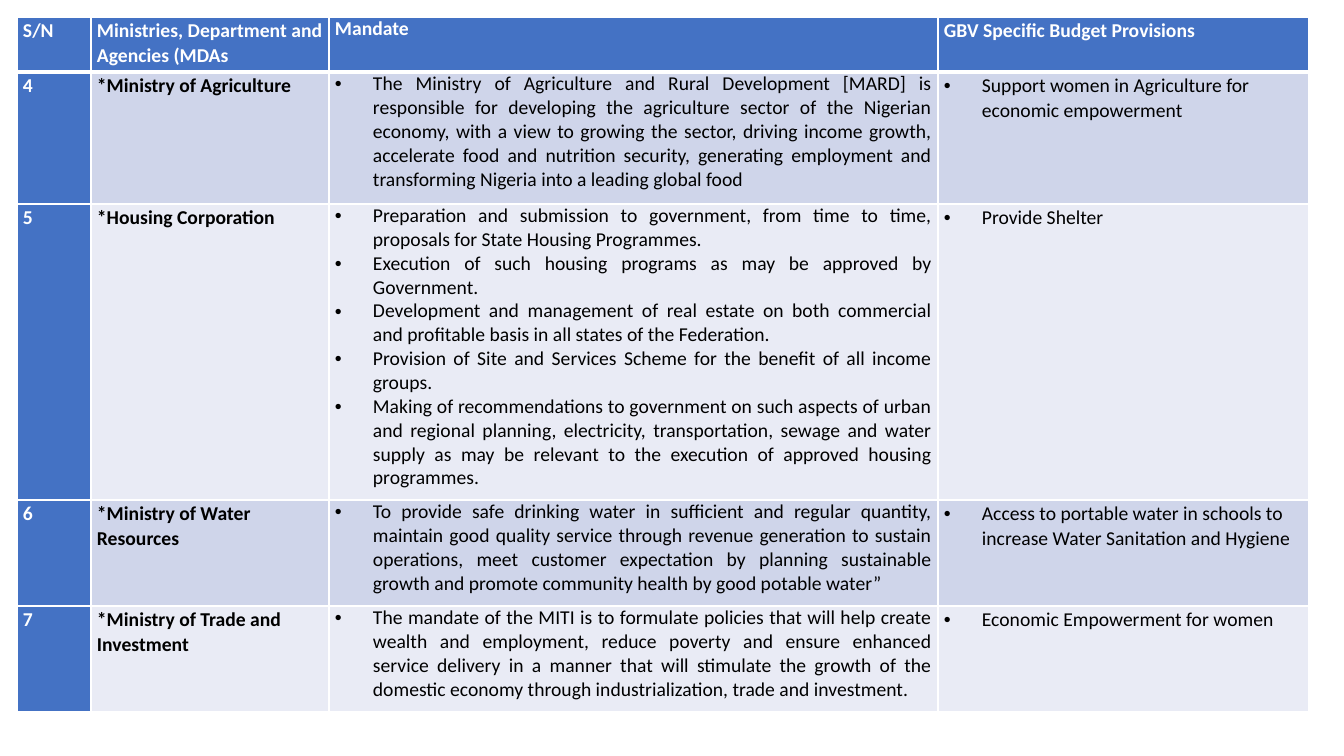
import pptx
import pptx.dml.color
import pptx.enum.text
import pptx.oxml.ns
import pptx.util
from lxml import etree

COLOURS = {
    "header": "4472C4",
    "band_dark": "CFD5EA",
    "band_light": "E9EBF5",
    "white": "FFFFFF",
    "black": "000000",
}
HEADINGS = ["S/N", "Ministries, Department and Agencies (MDAs", "Mandate",
            "GBV Specific Budget Provisions"]
# Number, ministry, mandate points, budget provision
MINISTRIES = [
    ("4", "*Ministry of Agriculture", [
        "The Ministry of Agriculture and Rural Development [MARD] is responsible for "
        "developing the agriculture sector of the Nigerian economy, with a view to "
        "growing the sector, driving income growth, accelerate food and nutrition "
        "security, generating employment and transforming Nigeria into a leading "
        "global food",
    ], "Support women in Agriculture for economic empowerment"),
    ("5", "*Housing Corporation", [
        "Preparation and submission to government, from time to time, proposals for "
        "State Housing Programmes.",
        "Execution of such housing programs as may be approved by Government.",
        "Development and management of real estate on both commercial and profitable "
        "basis in all states of the Federation.",
        "Provision of Site and Services Scheme for the benefit of all income groups.",
        "Making of recommendations to government on such aspects of urban and regional "
        "planning, electricity, transportation, sewage and water supply as may be "
        "relevant to the execution of approved housing programmes.",
    ], "Provide Shelter"),
    ("6", "*Ministry of Water Resources", [
        "To provide safe drinking water in sufficient and regular quantity, maintain "
        "good quality service through revenue generation to sustain operations, meet "
        "customer expectation by planning sustainable growth and promote community "
        "health by good potable water”",
    ], "Access to portable water in schools to increase Water Sanitation and Hygiene"),
    ("7", "*Ministry of Trade and Investment", [
        "The mandate of the MITI is to formulate policies that will help create wealth "
        "and employment, reduce poverty and ensure enhanced service delivery in a "
        "manner that will stimulate the growth of the domestic economy through "
        "industrialization, trade and investment.",
    ], "Economic Empowerment for women"),
]
COLUMN_WIDTHS = [74, 238, 609, 371]
ROW_HEIGHTS = [55, 132, 296, 106, 106]
MANDATE_COLUMN = 2


class SlideBuilder:
    font_name = "Calibri"
    font_size = 14
    emu_per_px = 914400 / 100.8

    def __init__(self, page):
        self.page = page

    def px(self, length):
        return pptx.util.Emu(round(length * self.emu_per_px))

    def colour(self, name):
        return pptx.dml.color.RGBColor.from_string(COLOURS[name])

    def table(self, left, top, widths, heights):
        frame = self.page.shapes.add_table(
            len(heights), len(widths), self.px(left), self.px(top),
            self.px(sum(widths)), self.px(sum(heights)))
        table = frame.table
        table.first_col = True
        for column, width in zip(table.columns, widths):
            column.width = self.px(width)
        for row, height in zip(table.rows, heights):
            row.height = self.px(height)
        return table

    def cell(self, cell, texts, fill, colour, bold, justified=False, bulleted=False):
        cell.margin_left = cell.margin_right = self.px(6)
        cell.margin_top = cell.margin_bottom = 0
        cell.fill.solid()
        cell.fill.fore_color.rgb = self.colour(fill)
        frame = cell.text_frame
        frame.text = "\n".join(texts)
        for para in frame.paragraphs:
            if justified:
                para.alignment = pptx.enum.text.PP_ALIGN.JUSTIFY
            else:
                para.line_spacing = 1.07
                para.space_after = pptx.util.Pt(8)
            if bulleted:
                self.bullet(para)
            para.font.name = self.font_name
            para.font.size = pptx.util.Pt(self.font_size)
            para.font.bold = bold
            para.font.color.rgb = self.colour(colour)

    def bullet(self, para):
        indent = self.px(38)
        properties = para._p.get_or_add_pPr()
        properties.set("marL", str(indent))
        properties.set("indent", str(-indent))
        for tag, key, value in (("a:buFont", "typeface", "Arial"), ("a:buChar", "char", "•")):
            etree.SubElement(properties, pptx.oxml.ns.qn(tag)).set(key, value)

    def borders(self, cell, top, bottom):
        """Rule the cell in white, with the top and bottom widths in points."""
        properties = cell._tc.get_or_add_tcPr()
        widths = {"a:lnL": 1, "a:lnR": 1, "a:lnT": top, "a:lnB": bottom}
        for position, (tag, width) in enumerate(widths.items()):
            line = etree.Element(pptx.oxml.ns.qn(tag), w=str(pptx.util.Pt(width)))
            fill = etree.SubElement(line, pptx.oxml.ns.qn("a:solidFill"))
            etree.SubElement(fill, pptx.oxml.ns.qn("a:srgbClr"), val=COLOURS["white"])
            properties.insert(position, line)


def main():
    deck = pptx.Presentation()
    page = deck.slides.add_slide(deck.slide_layouts[6])
    builder = SlideBuilder(page)
    deck.slide_width = builder.px(1344)
    deck.slide_height = builder.px(756)

    table = builder.table(17, 17, COLUMN_WIDTHS, ROW_HEIGHTS)
    for column, heading in enumerate(HEADINGS):
        cell = table.cell(0, column)
        builder.cell(cell, [heading], "header", "white", True,
                     justified=column == MANDATE_COLUMN)
        builder.borders(cell, top=1, bottom=3)

    for row, (number, ministry, mandate, provision) in enumerate(MINISTRIES, start=1):
        band = "band_dark" if row % 2 else "band_light"
        cells = [table.cell(row, column) for column in range(len(HEADINGS))]
        builder.cell(cells[0], [number], "header", "white", True)
        builder.cell(cells[1], [ministry], band, "black", True)
        builder.cell(cells[2], mandate, band, "black", False, justified=True, bulleted=True)
        builder.cell(cells[3], [provision], band, "black", False, bulleted=True)
        for cell in cells:
            builder.borders(cell, top=3 if row == 1 else 1, bottom=1)

    deck.save("out.pptx")


if __name__ == "__main__":
    main()
